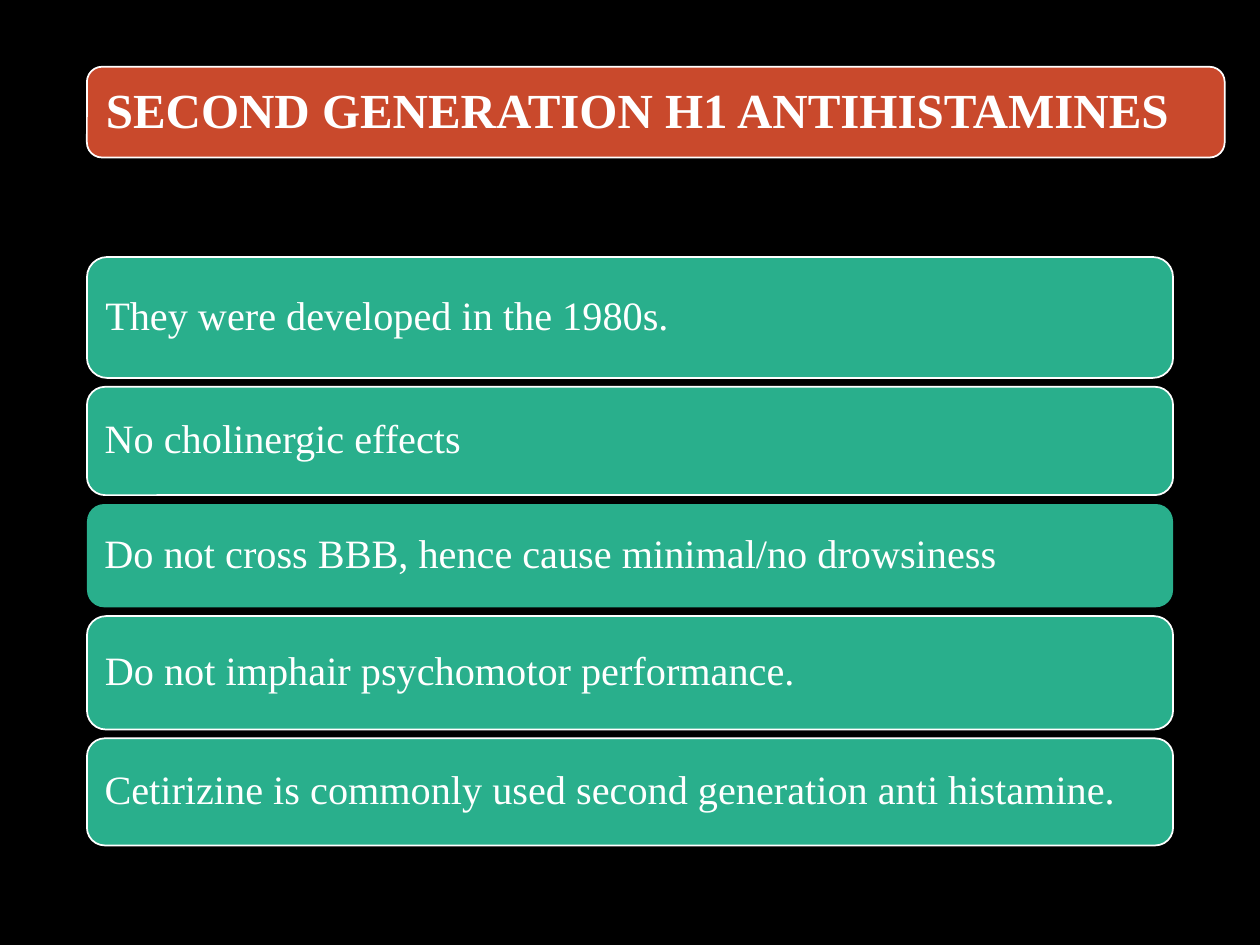
"""Build a slide listing the traits of second generation H1 antihistamines."""
import dataclasses

import pptx
import pptx.dml.color
import pptx.enum.shapes
import pptx.enum.text
import pptx.presentation
import pptx.shapes.autoshape
import pptx.slide
import pptx.text.text
import pptx.util

SLIDE_WIDTH = pptx.util.Inches(10)
SLIDE_HEIGHT = pptx.util.Inches(7.5)
COLUMNS, ROWS = 1000, 750
LEFT_COLUMN = 69
PANEL_COLUMNS = 862
FIRST_PANEL_ROW = 204
GAP_ROWS = 7
FONT_NAME = "Times New Roman"
BLACK, WHITE, RED, GREEN = "000000", "FFFFFF", "C9492C", "29AF8C"


@dataclasses.dataclass(frozen=True)
class Area:
    column: int
    row: int
    columns: int
    rows: int


@dataclasses.dataclass(frozen=True)
class Panel:
    text: str
    rows: int
    outlined: bool = True


TITLE_BAR = Area(LEFT_COLUMN, 53, 903, 72)
TITLE_TEXT = Area(72, 57, 896, 65)
PANELS = (
    Panel("They were developed in the 1980s.", 96),
    Panel("No cholinergic effects", 86),
    Panel("Do not cross BBB, hence cause minimal/no drowsiness", 82, outlined=False),
    Panel("Do not imphair psychomotor performance.", 90),
    Panel("Cetirizine is commonly used second generation anti histamine.", 85),
)


def color(hex_value: str) -> pptx.dml.color.RGBColor:
    return pptx.dml.color.RGBColor.from_string(hex_value)


def bounds(area: Area) -> tuple[int, int, int, int]:
    return (
        round(SLIDE_WIDTH * area.column / COLUMNS),
        round(SLIDE_HEIGHT * area.row / ROWS),
        round(SLIDE_WIDTH * area.columns / COLUMNS),
        round(SLIDE_HEIGHT * area.rows / ROWS),
    )


def write(frame: pptx.text.text.TextFrame, text: str, size: int, inset: float, bold: bool = False) -> None:
    frame.word_wrap = True
    frame.auto_size = pptx.enum.text.MSO_AUTO_SIZE.NONE
    frame.vertical_anchor = pptx.enum.text.MSO_ANCHOR.MIDDLE
    frame.margin_left = frame.margin_right = pptx.util.Inches(inset)
    frame.margin_top = frame.margin_bottom = pptx.util.Inches(inset)
    paragraph = frame.paragraphs[0]
    paragraph.alignment = pptx.enum.text.PP_ALIGN.LEFT
    paragraph.line_spacing = 0.9
    run = paragraph.add_run()
    run.text = text
    run.font.name = FONT_NAME
    run.font.size = pptx.util.Pt(size)
    run.font.bold = bold
    run.font.color.rgb = color(WHITE)


def draw_box(slide: pptx.slide.Slide, area: Area, fill: str, outlined: bool = True) -> pptx.shapes.autoshape.Shape:
    shape = slide.shapes.add_shape(pptx.enum.shapes.MSO_SHAPE.ROUNDED_RECTANGLE, *bounds(area))
    shape.shadow.inherit = False
    shape.fill.solid()
    shape.fill.fore_color.rgb = color(fill)
    if outlined:
        shape.line.color.rgb = color(WHITE)
        shape.line.width = pptx.util.Pt(1)
    else:
        shape.line.fill.background()
    return shape


def draw_title(slide: pptx.slide.Slide) -> None:
    bar = draw_box(slide, TITLE_BAR, RED)
    title = slide.shapes.title
    title.left, title.top, title.width, title.height = bounds(TITLE_TEXT)
    write(title.text_frame, "SECOND GENERATION H1 ANTIHISTAMINES", 28, 0.12, bold=True)
    bar.element.addnext(title.element)


def draw_panels(slide: pptx.slide.Slide) -> None:
    row = FIRST_PANEL_ROW
    for panel in PANELS:
        area = Area(LEFT_COLUMN, row, PANEL_COLUMNS, panel.rows)
        shape = draw_box(slide, area, GREEN, panel.outlined)
        write(shape.text_frame, panel.text, 23, 0.1)
        row += panel.rows + GAP_ROWS


def main() -> None:
    presentation = pptx.Presentation()
    presentation.slide_width, presentation.slide_height = SLIDE_WIDTH, SLIDE_HEIGHT
    slide = presentation.slides.add_slide(presentation.slide_layouts.get_by_name("Title Only"))
    slide.background.fill.solid()
    slide.background.fill.fore_color.rgb = color(BLACK)
    draw_title(slide)
    draw_panels(slide)
    presentation.save("out.pptx")


if __name__ == "__main__":
    main()
